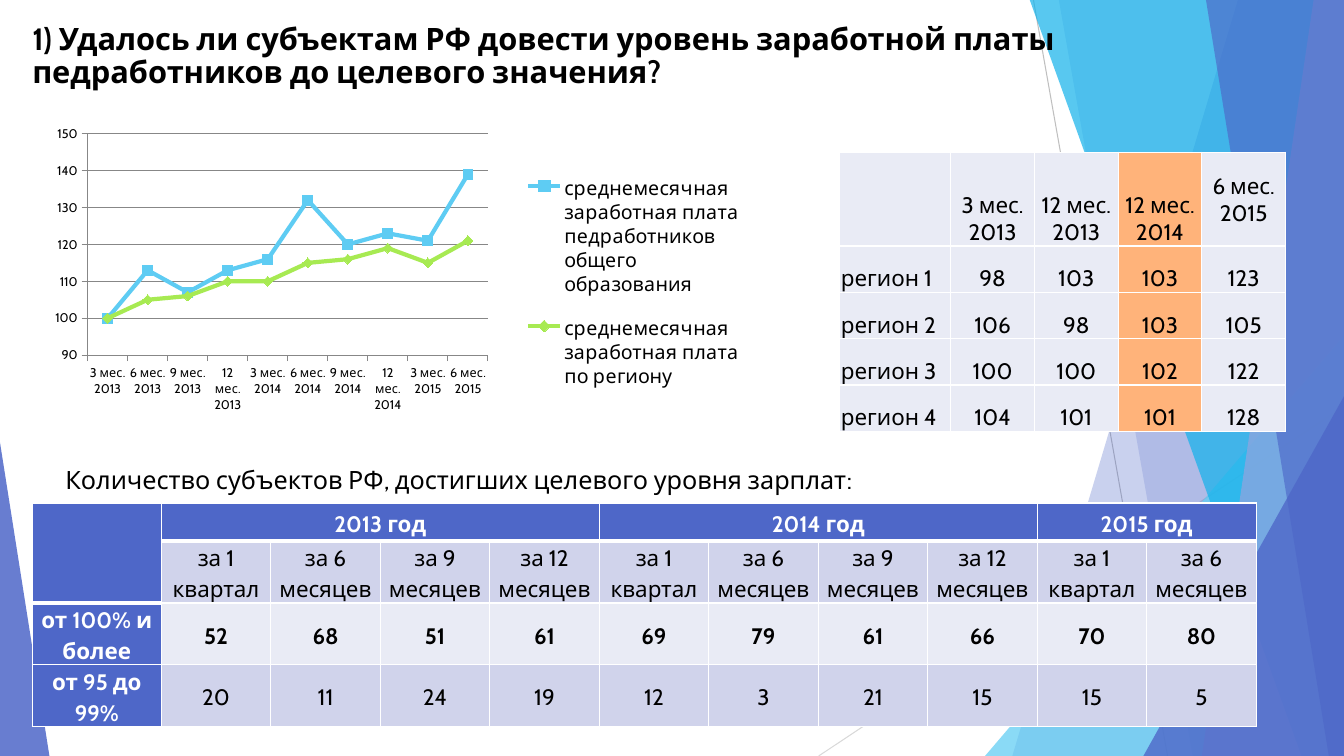
from lxml import etree
from pptx import Presentation
from pptx import util as u
from pptx.chart import data
from pptx.dml import color
from pptx.enum import chart as kinds, shapes, text
from pptx.oxml import ns

BLUE, SKY, LIME = "4E67C8", "5ECCF3", "A7EA52"
PALE, MID, PEACH = "E9EBF5", "D0D3EB", "FFB37A"
BLACK, WHITE, GREY = "000000", "FFFFFF", "878787"
MIDDLE, BOTTOM = text.MSO_ANCHOR.MIDDLE, text.MSO_ANCHOR.BOTTOM
LEFT, CENTER = text.PP_ALIGN.LEFT, text.PP_ALIGN.CENTER


def hue(code):
    return color.RGBColor.from_string(code)


def inch(*nums):
    return [u.Inches(n) for n in nums]


def node(parent, tag, **attrs):
    return etree.SubElement(parent, ns.qn(tag), **attrs)


class Deck:
    font = "Cabin"

    def __init__(self):
        self.prs = Presentation()
        self.prs.slide_width, self.prs.slide_height = inch(13.33, 7.5)
        self.slide = self.prs.slides.add_slide(self.prs.slide_layouts[5])
        self.shapes = self.slide.shapes

    def style(self, font, size, code=BLACK, bold=False):
        font.name, font.size, font.bold = self.font, u.Pt(size), bold
        font.color.rgb = hue(code)

    def say(self, frame, words, size, code=BLACK, bold=False, align=LEFT):
        par = frame.paragraphs[0]
        par.alignment = align
        run = par.add_run()
        run.text = words
        self.style(run.font, size, code, bold)
        return par

    def paint(self, shape, code, alpha):
        shape.shadow.inherit = False
        shape.fill.solid()
        shape.fill.fore_color.rgb = hue(code)
        shape.line.fill.background()
        tint = shape._element.spPr.find(".//" + ns.qn("a:srgbClr"))
        node(tint, "a:alpha", val=str(alpha * 1000))

    def line(self, ends, code):
        rule = self.shapes.add_connector(shapes.MSO_CONNECTOR.STRAIGHT, *inch(*ends))
        rule.line.color.rgb = hue(code)
        rule.line.width = u.Pt(0.75)
        node(rule._element.spPr, "a:effectLst")

    def band(self, top, foot, code, alpha):
        pen = self.shapes.build_freeform(*inch(top, -0.01), scale=1.0)
        pen.add_line_segments([inch(*dot) for dot in
                               ((13.33, -0.01), (13.33, 7.5), (foot, 7.5))], close=True)
        self.paint(pen.convert_to_shape(), code, alpha)

    def wedge(self, box, tip, code, alpha):
        shape = self.shapes.add_shape(shapes.MSO_SHAPE.ISOSCELES_TRIANGLE, *inch(*box))
        shape.adjustments[0] = tip
        self.paint(shape, code, alpha)

    def title(self, words):
        head = self.shapes.title
        self.shapes._spTree.append(head._element)
        head.left, head.top, head.width, head.height = inch(0.22, 0.13, 12.85, 0.87)
        frame = head.text_frame
        frame.word_wrap, frame.vertical_anchor = True, MIDDLE
        frame.auto_size = text.MSO_AUTO_SIZE.NONE
        frame.margin_right = u.Inches(1)
        self.say(frame, words, 22, bold=True).line_spacing = 0.9

    def label(self, box, words):
        frame = self.shapes.add_textbox(*inch(*box)).text_frame
        frame.word_wrap = True
        self.say(frame, words, 18)

    def place(self, parent, spot, inner=False):
        old = parent.find(ns.qn("c:layout"))
        if old is not None:
            parent.remove(old)
        layout = etree.Element(ns.qn("c:layout"))
        man = node(layout, "c:manualLayout")
        if inner:
            node(man, "c:layoutTarget", val="inner")
        for key in "xy":
            node(man, f"c:{key}Mode", val="edge")
        for key, num in zip("xywh", spot):
            node(man, f"c:{key}", val=str(num))
        parent.insert(0 if inner else 1, layout)

    def chart(self, box, cats, rows):
        pack = data.CategoryChartData(number_format="0")
        pack.categories = cats
        for name, vals, *_ in rows:
            pack.add_series(name, vals)
        chart = self.shapes.add_chart(kinds.XL_CHART_TYPE.LINE_MARKERS, *inch(*box), pack).chart
        self.style(chart.font, 10)
        chart.has_title = False
        chart.has_legend = True
        key = chart.legend
        key.position = kinds.XL_LEGEND_POSITION.RIGHT
        key.include_in_layout = False
        self.style(key.font, 14)
        self.place(key._element, (0.68, 0.13, 0.32, 0.76))
        plot = chart.plots[0]
        plot.vary_by_categories = False
        self.place(chart._chartSpace.chart.plotArea, (0.09, 0.06, 0.55, 0.67), True)
        for axis in (chart.category_axis, chart.value_axis):
            self.style(axis.tick_labels.font, 9)
            axis.major_tick_mark = kinds.XL_TICK_MARK.OUTSIDE
            axis.format.line.color.rgb = hue(GREY)
        axis = chart.value_axis
        axis.minimum_scale, axis.maximum_scale, axis.major_unit = 90, 150, 10
        axis.tick_labels.number_format = "0"
        axis.tick_labels.number_format_is_linked = False
        axis.has_major_gridlines = True
        axis.major_gridlines.format.line.color.rgb = hue(GREY)
        for line, (_, _, code, mark) in zip(plot.series, rows):
            line.smooth = False
            line.format.line.color.rgb = hue(code)
            line.format.line.width = u.Pt(3)
            line.marker.style, line.marker.size = mark, 7
            line.marker.format.fill.solid()
            line.marker.format.fill.fore_color.rgb = hue(code)
            line.marker.format.line.color.rgb = hue(code)

    def table(self, box, cols, highs, rows, look):
        grid = self.shapes.add_table(len(rows), len(cols), *inch(*box)).table
        grid.first_row = grid.horz_banding = False
        for col, wide in zip(grid.columns, cols):
            col.width = u.Inches(wide)
        for row, high in zip(grid.rows, highs):
            row.height = u.Inches(high)
        for r, row in enumerate(rows):
            for c, words in enumerate(row):
                self.cell(grid.cell(r, c), words, **look(r, c))
        return grid

    def cell(self, cell, words, fill, pads, code=BLACK, bold=False, align=CENTER,
             anchor=MIDDLE, gap=None, after=None, top=1, foot=1):
        cell.margin_left, cell.margin_top, cell.margin_right, cell.margin_bottom = inch(*pads)
        cell.vertical_anchor = anchor
        cell.fill.solid()
        cell.fill.fore_color.rgb = hue(fill)
        props = cell._tc.get_or_add_tcPr()
        for i, (side, wide) in enumerate(zip("LRTB", (1, 1, top, foot))):
            edge = etree.Element(ns.qn(f"a:ln{side}"), w=str(u.Pt(wide)))
            node(node(edge, "a:solidFill"), "a:srgbClr", val=WHITE)
            props.insert(i, edge)
        if words:
            par = self.say(cell.text_frame, words, 16, code, bold, align)
            par.line_spacing = gap
            par.space_after = after


def region(r, c):
    return dict(fill=PEACH if c == 3 else PALE, pads=(0.01, 0.01, 0.01, 0),
                align=CENTER if c else LEFT,
                anchor=MIDDLE if (r, c) == (0, 4) else BOTTOM)


def count(r, c):
    head = r == 0 or c == 0
    split = 2 if c == 0 else 1
    return dict(fill=BLUE if head else PALE if r == 2 else MID, pads=(0.07, 0, 0.07, 0),
                code=WHITE if head else BLACK, bold=head or r == 2,
                gap=1.15, after=u.Pt(8),
                top=3 if r == split else 1, foot=3 if r == split - 1 else 1)


def main():
    deck = Deck()
    deck.line((10.25, 0, 11.58, 7.5), "BFBFBF")
    deck.line((13.33, 4.03, 8.12, 7.5), "D9D9D9")
    deck.band(12.28, 10.04, BLUE, 30)
    deck.band(10.5, 11.83, BLUE, 20)
    deck.wedge((9.77, 3.33, 3.56, 4.17), 1, SKY, 72)
    deck.band(10.21, 12.91, "12B2EB", 70)
    deck.band(13.03, 11.92, "95A4DE", 70)
    deck.band(11.96, 13.18, BLUE, 65)
    deck.wedge((11.34, 3.93, 1.99, 3.57), 1, BLUE, 80)
    deck.wedge((0, 4.39, 0.49, 3.11), 0, BLUE, 85)

    deck.title("1) Удалось ли субъектам РФ довести уровень заработной платы "
               "педработников до целевого значения?")
    deck.label((0.55, 4.56, 8.33, 0.4),
               "Количество субъектов РФ, достигших целевого уровня зарплат:")

    dates = [f"{m} мес. {y}" for y in (2013, 2014, 2015) for m in (3, 6, 9, 12)][:10]
    marks = kinds.XL_MARKER_STYLE
    deck.chart((0.22, 1.13, 7.22, 3.28), dates, [
        ("среднемесячная заработная плата педработников общего образования",
         (100, 113, 107, 113, 116, 132, 120, 123, 121, 139), SKY, marks.SQUARE),
        ("среднемесячная заработная плата по региону",
         (100, 105, 106, 110, 110, 115, 116, 119, 115, 121), LIME, marks.DIAMOND)])

    deck.table((8.33, 1.51, 4.42, 2.78), [1.1] + [0.83] * 4, [0.93] + [0.46] * 4, [
        ("", "3 мес. 2013", "12 мес. 2013", "12 мес. 2014", "6 мес. 2015"),
        ("регион 1", "98", "103", "103", "123"),
        ("регион 2", "106", "98", "103", "105"),
        ("регион 3", "100", "100", "102", "122"),
        ("регион 4", "104", "101", "101", "128")], region)

    terms = ["за 1 квартал", "за 6 месяцев", "за 9 месяцев", "за 12 месяцев"]
    years = {1: "2013 год", 5: "2014 год", 9: "2015 год"}
    grid = deck.table(
        (0.32, 4.99, 12.14, 2.22), [1.28] + [(12.14 - 1.28) / 10] * 10, [0.38] + [0.6] * 3, [
            [years.get(c, "") for c in range(11)],
            [""] + (terms * 3)[:10],
            ["от 100% и более"] + "52 68 51 61 69 79 61 66 70 80".split(),
            ["от 95 до 99%"] + "20 11 24 19 12 3 21 15 15 5".split()], count)
    grid.cell(0, 0).merge(grid.cell(1, 0))
    for c in years:
        grid.cell(0, c).merge(grid.cell(0, min(c + 3, 10)))
    deck.prs.save("out.pptx")


if __name__ == "__main__":
    main()
